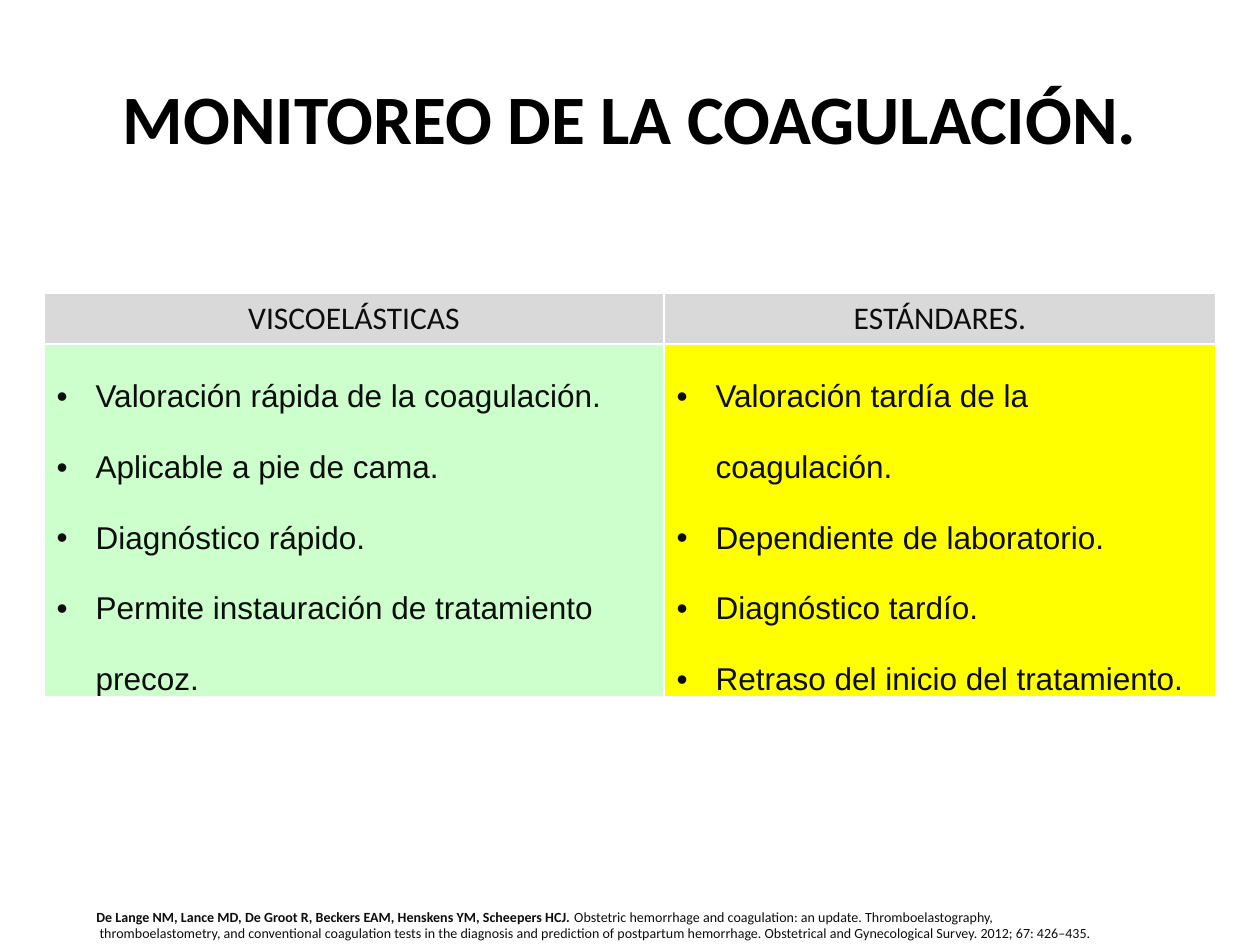
from lxml.etree import SubElement
from pptx import Presentation
from pptx.dml.color import RGBColor
from pptx.enum.text import MSO_ANCHOR as Anchor, MSO_AUTO_SIZE as AutoSize, PP_ALIGN as Align
from pptx.oxml.ns import qn
from pptx.util import Pt

TITLE = "MONITOREO DE LA COAGULACIÓN."
BLACK = RGBColor(0x00, 0x00, 0x00)
INK = RGBColor(0x0D, 0x0D, 0x0D)
GRAY = RGBColor(0xD9, 0xD9, 0xD9)
GREEN = RGBColor(0xCC, 0xFF, 0xCC)
YELLOW = RGBColor(0xFF, 0xFF, 0x00)
WHITE = RGBColor(0xFF, 0xFF, 0xFF)

COLUMNS = [
    ("VISCOELÁSTICAS", 620, GREEN, [
        "Valoración rápida de la coagulación.",
        "Aplicable a pie de cama.",
        "Diagnóstico rápido.",
        "Permite instauración de tratamiento precoz.",
    ]),
    ("ESTÁNDARES.", 552, YELLOW, [
        "Valoración tardía de la coagulación.",
        "Dependiente de laboratorio.",
        "Diagnóstico tardío.",
        "Retraso del inicio del tratamiento.",
    ]),
]
CITATION = [
    [("De Lange NM, Lance MD, De Groot R, Beckers EAM, Henskens YM, Scheepers HCJ. ", True),
     ("Obstetric hemorrhage and coagulation: an update. Thromboelastography,", False)],
    [(" thromboelastometry, and conventional coagulation tests in the diagnosis and prediction "
      "of postpartum hemorrhage. Obstetrical and Gynecological Survey. 2012; 67: 426–435.", False)],
]


def px(n):
    return round(n * 914400 / 126)


def add_run(p, text, size, font="Calibri", color=INK, bold=False):
    r = p.add_run()
    r.text = text
    r.font.size, r.font.name, r.font.bold = Pt(size), font, bold
    r.font.color.rgb = color


def add_bullet(p):
    pPr = p._p.get_or_add_pPr()
    pPr.set("marL", str(px(39)))
    pPr.set("indent", str(-px(39)))
    SubElement(pPr, qn("a:buFont"), typeface="Arial")
    SubElement(pPr, qn("a:buChar"), char="•")


def style_cell(cell, color):
    tcPr = cell._tc.get_or_add_tcPr()
    for side in ("lnL", "lnR", "lnT", "lnB"):
        ln = SubElement(tcPr, qn(f"a:{side}"), w=str(Pt(1)))
        SubElement(SubElement(ln, qn("a:solidFill")), qn("a:srgbClr"), val=str(WHITE))
    cell.fill.solid()
    cell.fill.fore_color.rgb = color


prs = Presentation()
prs.slide_width, prs.slide_height = px(1260), px(945)
s = prs.slides.add_slide(prs.slide_layouts[5])

title = s.shapes.title
title.left, title.top, title.width, title.height = px(63), px(38), px(1134), px(158)
tf = title.text_frame
tf.auto_size = AutoSize.NONE
tf.vertical_anchor = Anchor.MIDDLE
p = tf.paragraphs[0]
p.alignment = Align.CENTER
add_run(p, TITLE, 39.6, color=BLACK, bold=True)

width = sum(column[1] for column in COLUMNS)
frame = s.shapes.add_table(2, len(COLUMNS), px(44), px(293), px(width), px(104))
table = frame.table
for row in table.rows:
    row.height = px(51)
frame.height = px(430)
for i, (heading, col_width, color, points) in enumerate(COLUMNS):
    table.columns[i].width = px(col_width)
    head, body = table.cell(0, i), table.cell(1, i)
    style_cell(head, GRAY)
    p = head.text_frame.paragraphs[0]
    p.alignment = Align.CENTER
    add_run(p, heading, 18)

    style_cell(body, color)
    body.margin_top = body.margin_bottom = 0
    tf = body.text_frame
    for j, point in enumerate(points):
        p = tf.add_paragraph() if j else tf.paragraphs[0]
        p.line_spacing = 2.0
        add_bullet(p)
        add_run(p, point, 18, font="Arial")

tf = s.shapes.add_textbox(px(84), px(902), px(1116), px(84)).text_frame
tf.word_wrap = False
tf.auto_size = AutoSize.SHAPE_TO_FIT_TEXT
for i, line in enumerate(CITATION):
    p = tf.add_paragraph() if i else tf.paragraphs[0]
    p.alignment = Align.JUSTIFY
    for text, bold in line:
        add_run(p, text, 8, bold=bold)

prs.save("out.pptx")
